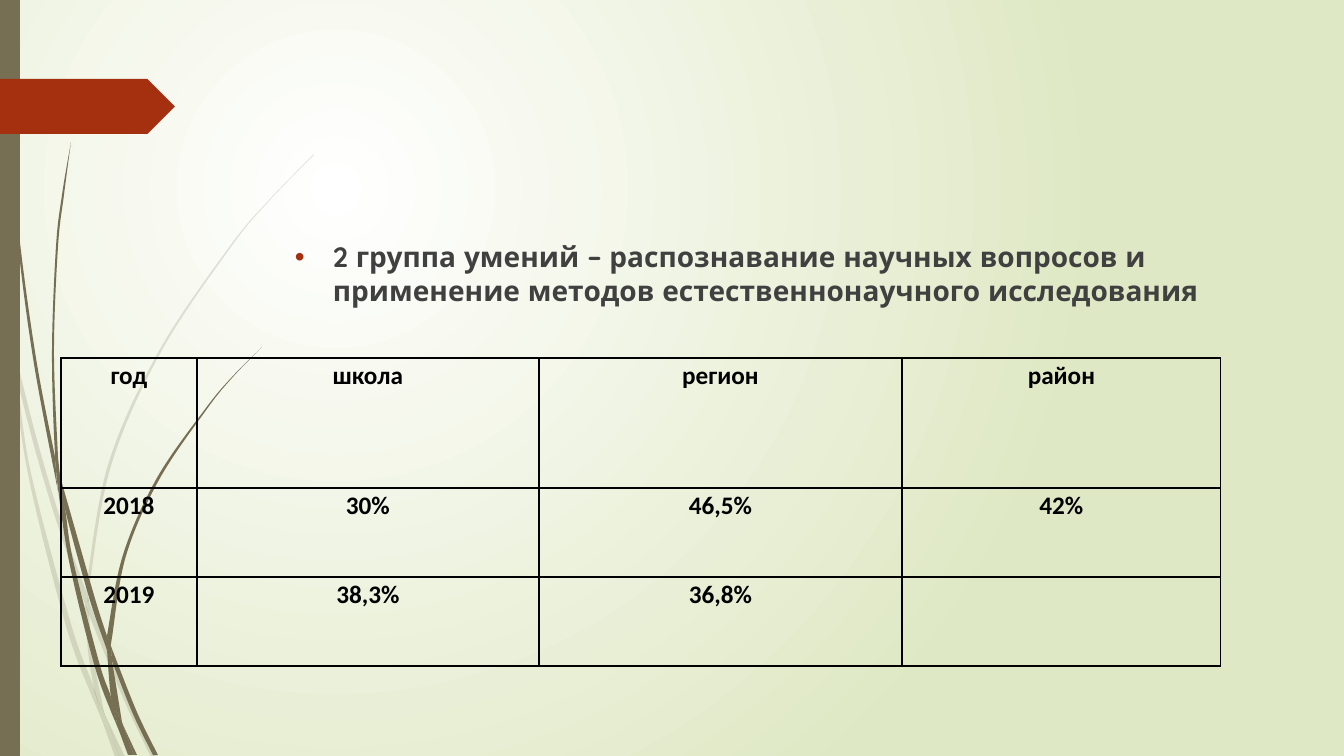
"""Build a slide with a table of yearly results over a grass background."""
from dataclasses import dataclass

from lxml import etree
from pptx import Presentation, util as u
from pptx.dml.color import RGBColor
from pptx.enum import shapes, text
from pptx.oxml.ns import qn


@dataclass(frozen=True)
class Theme:
    paper: str = "FFFFFF"
    meadow: str = "DFE8C4"
    grass: str = "766F54"
    accent: str = "A53010"
    body: str = "404040"
    ink: str = "000000"
    body_font: str = "Quicksand"
    table_font: str = "Calibri"
    body_size: int = 20
    table_size: int = 18
    pale_alpha: int = 20


WIDTH, HEIGHT = 1344, 756
EMU_PER_PX = 914400 / 100.8

PALE_BLADES = [
    ([(0, 284), (9, 325), (11, 353)], [(11, 351), (10, 347), (0, 301)]),
    ([(14, 348), (36, 436), (62, 524), (86, 591)], [(85, 604), (58, 526), (36, 453), (17, 379)]),
    ([(89, 601), (93, 612), (128, 698), (156, 757)], [(151, 757), (124, 700), (89, 615)]),
    ([(106, 717), (125, 757)], [(120, 757)]),
    ([(11, 353), (17, 379), (31, 473), (71, 624), (94, 688), (100, 713), (102, 720)],
     [(93, 699), (66, 626), (28, 474), (11, 353)]),
    ([(85, 604), (88, 651), (94, 688), (97, 698), (106, 717)],
     [(104, 712), (92, 651), (89, 615), (85, 604)]),
    ([(314, 154), (270, 199), (230, 246), (159, 351), (108, 465), (86, 589)],
     [(89, 601), (89, 589), (111, 466), (161, 352), (231, 247), (270, 200), (314, 155)]),
    ([(102, 720), (115, 757)], [(120, 757)]),
    ([(86, 591), (89, 601), (89, 615)], [(85, 604)]),
    ([(94, 688), (97, 698), (106, 717), (120, 757)], [(102, 720), (100, 713)]),
]
DARK_BLADES = [
    ([(4, 0), (5, 48), (8, 110), (19, 234), (36, 358), (55, 457)],
     [(57, 485), (56, 481), (33, 358), (17, 235), (7, 111), (4, 48), (3, 0)]),
    ([(60, 476), (94, 595), (107, 636)], [(107, 650), (89, 597), (65, 509), (60, 476)]),
    ([(111, 646), (114, 654), (137, 712), (158, 755)], [(153, 755), (133, 714), (112, 661)]),
    ([(57, 481), (65, 509), (73, 560), (99, 662), (111, 697), (117, 723), (118, 728)],
     [(112, 714), (94, 664), (69, 561), (57, 481)]),
    ([(71, 142), (62, 195), (56, 247), (52, 352), (55, 453), (60, 476)],
     [(58, 457), (54, 352), (58, 247), (64, 195), (71, 142)]),
    ([(123, 725), (137, 755)], [(134, 755)]),
    ([(55, 453), (60, 476), (65, 509)], [(57, 481), (55, 457)]),
    ([(262, 347), (233, 376), (206, 408), (157, 478), (123, 555), (107, 636)],
     [(111, 646), (112, 638), (126, 556), (159, 480), (207, 409), (233, 377), (262, 347)]),
    ([(118, 728), (128, 755)], [(132, 755)]),
    ([(107, 650), (111, 697), (117, 712), (123, 725)],
     [(122, 722), (112, 661), (110, 656), (107, 650)]),
    ([(107, 636), (111, 646), (112, 661)], [(107, 650)]),
    ([(111, 697), (117, 712), (123, 725), (134, 755)], [(131, 755), (118, 728), (117, 723)]),
]
HEADING = ("2 группа умений – распознавание научных вопросов и "
           "применение методов естественнонаучного исследования")
RESULTS = [
    ["год", "школа", "регион", "район"],
    ["2018", "30%", "46,5%", "42%"],
    ["2019", "38,3%", "36,8%", ""],
]


def px(length):
    return u.Emu(round(length * EMU_PER_PX))


def add_xml(parent, tag, **attributes):
    return etree.SubElement(parent, qn(tag), attributes)


def bend(side, lines):
    padded = [side[0], *side, side[-1]]
    for a, b, c, d, line in zip(padded, padded[1:], padded[2:], padded[3:], lines):
        enter = [q + (r - p) / 6 for p, q, r in zip(a, b, c)]
        leave = [r - (s - q) / 6 for q, r, s in zip(b, c, d)]
        line.tag = qn("a:cubicBezTo")
        for index, (x, y) in enumerate((enter, leave)):
            line.insert(index, etree.Element(qn("a:pt"), x=str(round(x)), y=str(round(y))))


class SlideBuilder:
    def __init__(self, deck, theme):
        self.theme = theme
        self.slide = deck.slides.add_slide(deck.slide_layouts[6])

    def background(self):
        fill = self.slide.background.fill
        fill.gradient()
        for stop, color in zip(fill.gradient_stops, (self.theme.paper, self.theme.meadow)):
            stop.color.rgb = RGBColor.from_string(color)
        gradient = next(self.slide.element.iter(qn("a:gradFill")))
        gradient.remove(gradient.find(qn("a:lin")))
        circle = add_xml(gradient, "a:path", path="circle")
        add_xml(circle, "a:fillToRect", l="50000", t="50000", r="100000", b="100000")

    def paint(self, shape, color, alpha=100):
        shape.shadow.inherit = False
        shape.line.fill.background()
        shape.fill.solid()
        shape.fill.fore_color.rgb = RGBColor.from_string(color)
        if alpha < 100:
            color_node = next(shape.element.spPr.iter(qn("a:srgbClr")))
            add_xml(color_node, "a:alpha", val=str(alpha * 1000))

    def blade(self, near, far, alpha=100):
        start, *rest = [(px(x), px(y)) for x, y in near + far]
        builder = self.slide.shapes.build_freeform(*start)
        builder.add_line_segments(rest)
        shape = builder.convert_to_shape()
        outline = shape.element.spPr
        points = [(int(pt.get("x")), int(pt.get("y"))) for pt in outline.iter(qn("a:pt"))]
        lines = list(outline.iter(qn("a:lnTo")))
        split, end = len(near), len(near) + len(far)
        bend(points[:split], lines[:split - 1])
        bend(points[split:end], lines[split:end - 1])
        self.paint(shape, self.theme.grass, alpha)

    def block(self, kind, left, top, width, height, color):
        shape = self.slide.shapes.add_shape(kind, px(left), px(top), px(width), px(height))
        self.paint(shape, color)

    def style(self, para, font_name, size, color):
        font = para.font
        font.name, font.size, font.bold = font_name, u.Pt(size), True
        font.color.rgb = RGBColor.from_string(color)

    def bullet(self, words, left, top, width, height, indent):
        box = self.slide.shapes.add_textbox(px(left), px(top), px(width), px(height))
        box.text_frame.word_wrap = True
        para = box.text_frame.paragraphs[0]
        para.text = words
        para.space_before = u.Pt(10)
        props = para._p.get_or_add_pPr()
        props.set("marL", str(px(indent)))
        props.set("indent", str(px(-indent)))
        add_xml(add_xml(props, "a:buClr"), "a:srgbClr", val=self.theme.accent)
        add_xml(props, "a:buFont", typeface="Arial")
        add_xml(props, "a:buChar", char="•")
        self.style(para, self.theme.body_font, self.theme.body_size, self.theme.body)

    def borders(self, cell):
        props = cell._tc.get_or_add_tcPr()
        for index, side in enumerate(("a:lnL", "a:lnR", "a:lnT", "a:lnB")):
            line = etree.Element(qn(side), w=str(u.Pt(1)))
            add_xml(add_xml(line, "a:solidFill"), "a:srgbClr", val=self.theme.ink)
            props.insert(index, line)

    def table(self, rows, left, top, widths, heights):
        frame = self.slide.shapes.add_table(len(rows), len(widths), px(left), px(top),
                                            px(sum(widths)), px(sum(heights)))
        grid = frame.table
        grid.first_row = grid.horz_banding = False
        for column, width in zip(grid.columns, widths):
            column.width = px(width)
        for row, height, values in zip(grid.rows, heights, rows):
            row.height = px(height)
            for cell, value in zip(row.cells, values):
                cell.margin_left = cell.margin_right = px(7)
                cell.margin_top = cell.margin_bottom = 0
                cell.fill.background()
                self.borders(cell)
                para = cell.text_frame.paragraphs[0]
                para.text = value
                para.alignment = text.PP_ALIGN.CENTER
                para.line_spacing = 1.07
                self.style(para, self.theme.table_font, self.theme.table_size, self.theme.ink)


def main():
    theme = Theme()
    deck = Presentation()
    deck.slide_width, deck.slide_height = px(WIDTH), px(HEIGHT)
    page = SlideBuilder(deck, theme)
    page.background()
    for near, far in PALE_BLADES:
        page.blade(near, far, theme.pale_alpha)
    for near, far in DARK_BLADES:
        page.blade(near, far)
    page.block(shapes.MSO_SHAPE.RECTANGLE, 0, 0, 20, HEIGHT, theme.grass)
    page.block(shapes.MSO_SHAPE.PENTAGON, 0, 79, 175, 55, theme.accent)
    page.bullet(HEADING, 285, 235, 983, 416, indent=38)
    page.table(RESULTS, 61, 358, widths=[136, 342, 363, 319], heights=[130, 89, 89])
    deck.save("out.pptx")


if __name__ == "__main__":
    main()
